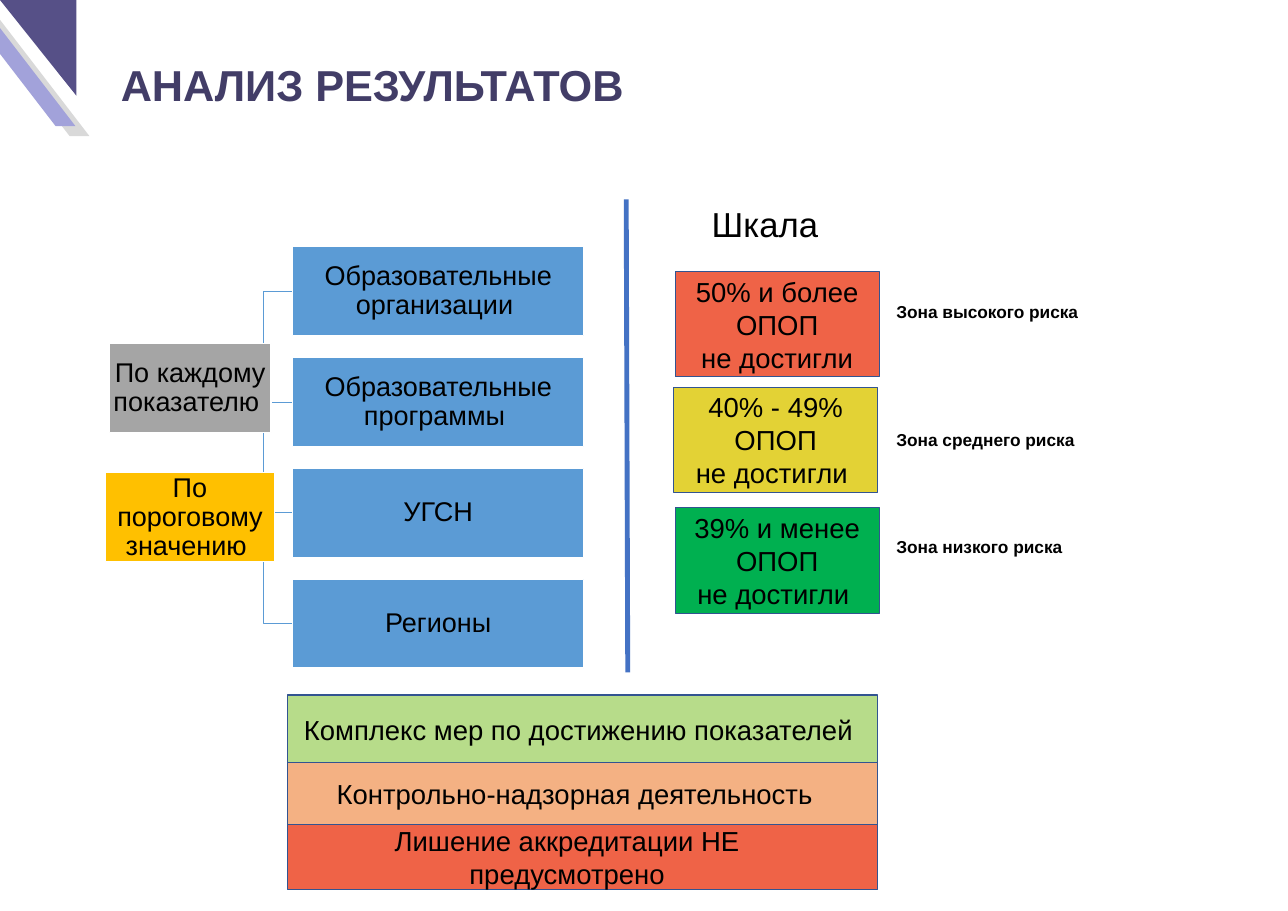
from pptx import Presentation
from pptx.dml.color import RGBColor
from pptx.enum.shapes import MSO_CONNECTOR, MSO_SHAPE
from pptx.enum.text import MSO_ANCHOR, PP_ALIGN
from pptx.util import Cm, Pt

COLORS = {
    "black": "000000", "white": "FFFFFF", "title": "423D67",
    "violet": "565087", "lilac": "A2A2DA", "silver": "D9D9D9",
    "blue": "5B9BD5", "gray": "A5A5A5", "amber": "FFC000",
    "divider": "4472C4", "border": "325491", "red": "EF6347",
    "yellow": "E3D235", "green": "00B050", "lime": "B7DC8A", "peach": "F4B183",
}
TREE_INSETS = {"margin_left": Cm(0.05), "margin_right": Cm(0.05),
               "margin_top": Cm(0.05), "margin_bottom": Cm(0.05)}
TREE_FORMAT = {"alignment": PP_ALIGN.CENTER, "line_spacing": 0.9}
CENTERED = {"alignment": PP_ALIGN.CENTER}


def rgb(name):
    """Return the named colour."""
    return RGBColor.from_string(COLORS[name])


def apply_format(target, values):
    """Set every attribute named in values on the target."""
    for attribute, value in values.items():
        setattr(target, attribute, value)


def write_text(shape, lines, font, paragraph_format, frame_format, color="black"):
    """Fill a shape with one formatted paragraph per line."""
    frame = shape.text_frame
    apply_format(frame, {"word_wrap": True, **frame_format})
    frame.text = "\n".join(lines)
    for paragraph in frame.paragraphs:
        apply_format(paragraph, paragraph_format)
        apply_format(paragraph.font, {"name": "Arial", **font})
        paragraph.font.color.rgb = rgb(color)


def add_filled(slide, kind, box, fill, border=None):
    """Add a flat preset shape, with a thin border if one is named."""
    shape = slide.shapes.add_shape(kind, *map(Cm, box))
    shape.shadow.inherit = False
    shape.fill.solid()
    shape.fill.fore_color.rgb = rgb(fill)
    if border:
        shape.line.color.rgb = rgb(border)
        shape.line.width = Pt(1)
    else:
        shape.line.fill.background()
    return shape


def add_box(slide, box, lines, fill, border="border", size=25.4,
            paragraph_format=CENTERED, insets=None):
    """Add a bordered rectangle with centred text."""
    shape = add_filled(slide, MSO_SHAPE.RECTANGLE, box, fill, border)
    frame_format = {"vertical_anchor": MSO_ANCHOR.MIDDLE, **(insets or {})}
    write_text(shape, lines, {"size": Pt(size)}, paragraph_format, frame_format)


def add_label(slide, box, text, size, bold=False, color="black", insets=None):
    """Add a left-aligned text box."""
    label = slide.shapes.add_textbox(*map(Cm, box))
    write_text(label, [text], {"size": Pt(size), "bold": bold}, {}, insets or {}, color)


def add_branch(slide, start, end):
    """Draw a right-angled branch that bends halfway."""
    middle = (start[0] + end[0]) / 2
    builder = slide.shapes.build_freeform(Cm(start[0]), Cm(start[1]), scale=1.0)
    corners = [(middle, start[1]), (middle, end[1]), end]
    builder.add_line_segments([(Cm(x), Cm(y)) for x, y in corners], close=False)
    branch = builder.convert_to_shape()
    branch.shadow.inherit = False
    branch.fill.background()
    branch.line.color.rgb = rgb("blue")
    branch.line.width = Pt(1)


def add_corner(slide):
    """Draw the corner ornament."""
    for left, top, fill in [(-0.89, 0.33, "silver"), (-1.35, 0, "lilac")]:
        stripe = add_filled(slide, MSO_SHAPE.PARALLELOGRAM, (left, top, 3.81, 4.11), fill)
        stripe.adjustments[0] = 0.83
        stripe._element.spPr.xfrm.set("flipH", "1")
    triangle = add_filled(slide, MSO_SHAPE.RIGHT_TRIANGLE, (0, 0, 2.49, 3.12), "violet")
    triangle.rotation = 180


def add_tree(slide):
    """Draw the criteria and the levels they branch into."""
    levels = ["Образовательные организации ", "Образовательные программы ", "УГСН", "Регионы"]
    left, top, step, height = 9.54, 8.05, 3.61, 2.9
    tops = [top + step * index for index in range(len(levels))]
    for level_top in tops:
        add_branch(slide, (7.65, 12.65), (left, level_top + height / 2))
    boxes = [((left, level_top, 9.5, height), text, "blue")
             for level_top, text in zip(tops, levels)]
    boxes += [((3.56, 11.2, 5.28, height), "По каждому показателю ", "gray"),
              ((3.45, 15.42, 5.49, height), "По пороговому значению ", "amber")]
    for box, text, fill in boxes:
        add_box(slide, box, [text], fill, "white", 25, TREE_FORMAT, TREE_INSETS)


def add_divider(slide):
    """Draw the line between the tree and the scale."""
    divider = slide.shapes.add_connector(
        MSO_CONNECTOR.STRAIGHT, Cm(20.42), Cm(6.5), Cm(20.47), Cm(21.92))
    divider.line.color.rgb = rgb("divider")
    divider.line.width = Pt(4.5)
    properties = divider._element.spPr
    properties.append(properties.makeelement(
        "{http://schemas.openxmlformats.org/drawingml/2006/main}effectLst", {}))


def add_scale(slide):
    """Draw the risk scale with its zone names."""
    add_label(slide, (22.96, 6.5, 4.34, 1.63), "Шкала", 32)
    zones = [
        (22.02, 8.86, "50% и более ОПОП", "не достигли", "red", 9.68, "Зона высокого риска"),
        (21.97, 12.62, "40% - 49% ОПОП", "не достигли ", "yellow", 13.87, "Зона среднего риска"),
        (22.02, 16.56, "39% и менее ОПОП", "не достигли ", "green", 17.37, "Зона низкого риска"),
    ]
    for left, top, share, result, fill, label_top, zone in zones:
        add_box(slide, (left, top, 6.65, 3.43), [share, result], fill)
        add_label(slide, (28.98, label_top, 6.65, 0.94), zone, 16, bold=True)


def add_measures(slide):
    """Draw the stacked bars of measures."""
    measures = [
        (22.66, 2.24, "Комплекс мер по достижению показателей", "lime", 0.5),
        (26.87, 2.13, "Лишение аккредитации НЕ предусмотрено", "red", 1.25),
        (24.87, 2.01, "Контрольно-надзорная деятельность", "peach", 0.75),
    ]
    for top, height, text, fill, right in measures:
        add_box(slide, (9.37, top, 19.25, height), [text], fill,
                insets={"margin_right": Cm(right)})


def main():
    """Build and save the slide."""
    presentation = Presentation()
    apply_format(presentation, {"slide_width": Cm(42), "slide_height": Cm(29.7)})
    slide = presentation.slides.add_slide(presentation.slide_layouts[6])
    add_corner(slide)
    add_tree(slide)
    add_divider(slide)
    add_scale(slide)
    add_measures(slide)
    add_label(slide, (3.94, 1.78, 31.52, 1.96), "АНАЛИЗ РЕЗУЛЬТАТОВ", 40,
              bold=True, color="title", insets={"margin_left": 0})
    presentation.save("out.pptx")


if __name__ == "__main__":
    main()
